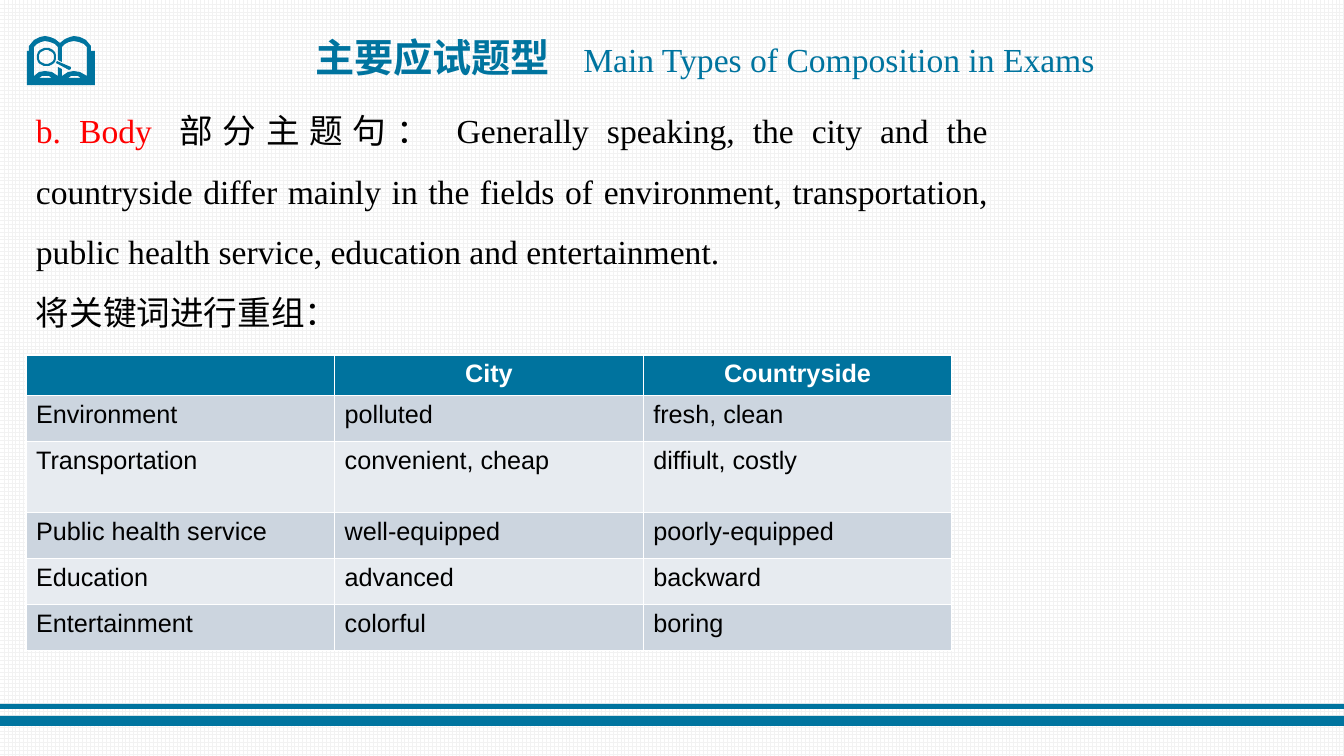
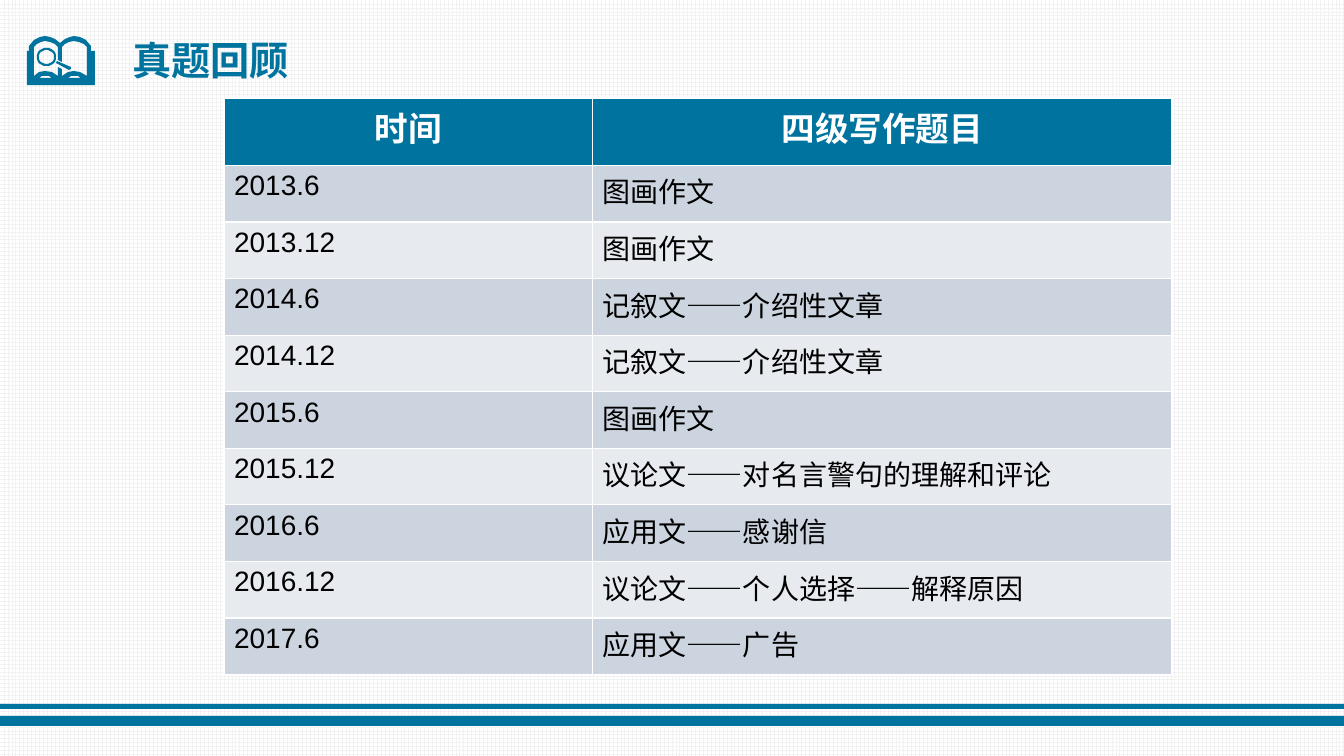
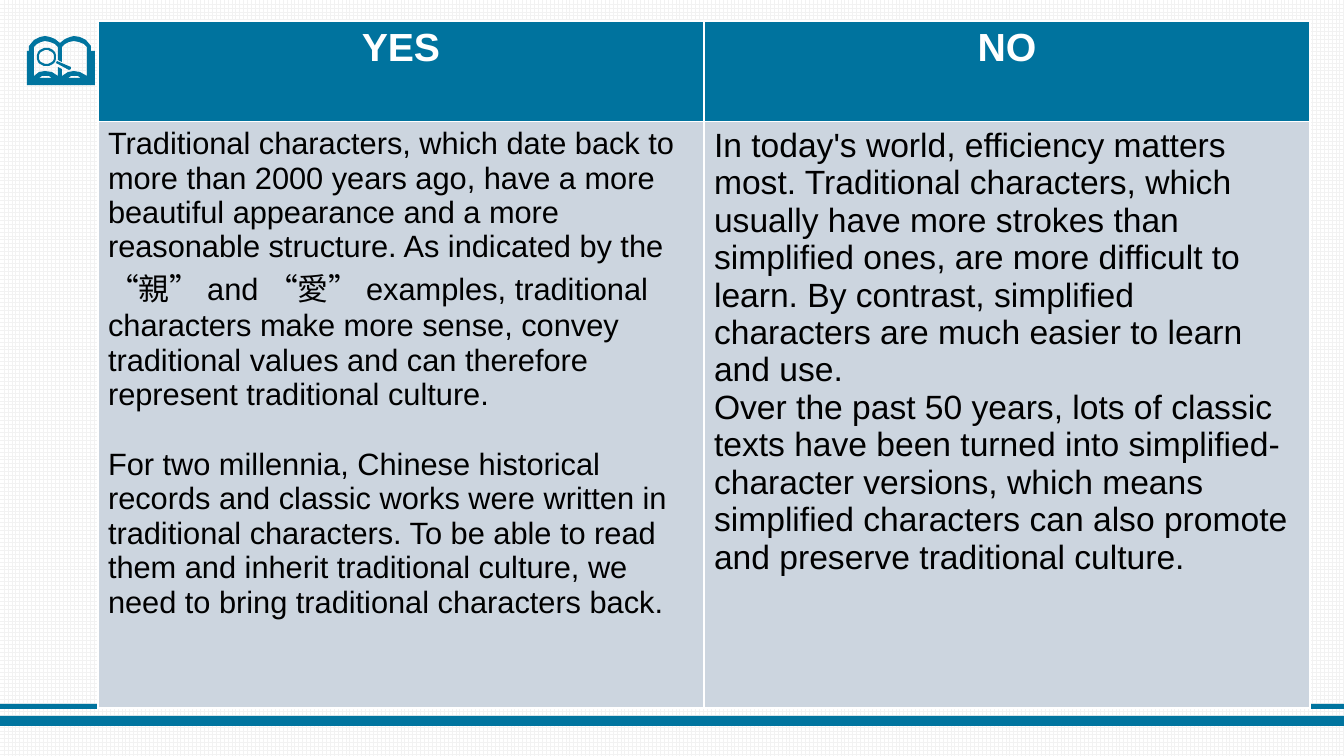
from dataclasses import dataclass
from math import cos, pi, sin
from typing import Any

from pptx import Presentation
from pptx.dml.color import RGBColor as Rgb
from pptx.enum.dml import MSO_PATTERN as Pattern
from pptx.enum.shapes import MSO_SHAPE as Kind
from pptx.enum.text import MSO_ANCHOR as Anchor, MSO_AUTO_SIZE as Fit, PP_ALIGN as Align
from pptx.util import Emu, Pt

WIDE, HIGH = 1344, 756
UNIT = 12192000 / WIDE

HEX = {
    "teal": "00749F", "head": "00739E", "odd": "CCD5DF", "even": "E7EBF0",
    "grid": "F2F2F2", "white": "FFFFFF", "black": "000000", "red": "FF0000",
}
SERIF, SANS = "Times New Roman", "Arial"
TITLE = {"name": SERIF, "size": Pt(28), "bold": True}
PLAIN = {"name": SERIF, "size": Pt(24), "bold": False}
BANDS = ((704, 5), (716, 10))

Point = tuple[float, float]
Box = tuple[int, int, int, int]


@dataclass
class Run:
    text: str
    hue: str
    font: dict[str, Any]


@dataclass
class Grid:
    """Columns and rows are shares of the box; each text line of a cell is a paragraph."""
    box: Box
    cols: tuple[int, ...]
    rows: tuple[int, ...]
    cells: list[tuple[str, ...]]
    head: int
    sizes: tuple[int, ...]
    gaps: tuple[int, ...]


def px(num: float) -> Emu:
    return Emu(round(num * UNIT))


def tint(hue: str) -> Rgb:
    return Rgb.from_string(HEX[hue])


def apply(item: Any, form: dict[str, Any]) -> None:
    for key, val in form.items():
        setattr(item, key, val)


def place(item: Any, box: Box) -> None:
    apply(item, dict(zip(("left", "top", "width", "height"), map(px, box))))


def write(para: Any, runs: list[Run], form: dict[str, Any]) -> None:
    apply(para, form)
    for run in runs:
        part = para.add_run()
        part.text = run.text
        apply(part.font, run.font)
        part.font.color.rgb = tint(run.hue)


def fill(shape: Any, hue: str) -> None:
    shape.shadow.inherit = False
    shape.fill.solid()
    shape.fill.fore_color.rgb = tint(hue)
    shape.line.fill.background()


# Shared look: background, bands and book icon
def ring(mid_x: float, mid_y: float, size: float) -> list[Point]:
    turns = [2 * pi * step / 24 for step in range(24)]
    return [(mid_x + size * cos(turn), mid_y + size * sin(turn)) for turn in turns]


def hump(mid: int) -> list[Point]:
    return [(mid - 6, 78), (mid - 3, 76), (mid + 4, 76), (mid + 7, 78)]


COVER = [
    (45, 36), (50, 37), (55, 39), (60, 43), (65, 39), (70, 37), (74, 36), (80, 37),
    (86, 40), (91, 46), (91, 51), (95, 51), (95, 85), (27, 85), (27, 51), (29, 51),
    (29, 46), (34, 40), (40, 37),
]
PAGES = [
    (45, 41), (50, 42), (55, 44), (58, 47), (58, 60), (62, 62), (62, 47), (65, 44),
    (69, 42), (74, 41), (79, 42), (84, 44), (87, 47), (87, 76), (80, 72), (74, 71),
    (68, 72), (62, 76), (62, 69), (58, 67), (58, 76), (52, 72), (45, 71), (39, 72),
    (34, 76), (34, 47), (37, 44), (41, 42),
]
STEM = [(57, 61), (71, 67), (71, 69), (69, 70), (56, 63)]
BOOK = [COVER, PAGES, ring(46.5, 57, 9.5), ring(46.5, 57, 7.5), STEM, hump(45), hump(74)]


def book(slide: Any) -> Any:
    pen = slide.shapes.build_freeform(*BOOK[0][0], scale=UNIT)
    for spot, line in enumerate(BOOK):
        if spot:
            pen.move_to(*line[0])
        pen.add_line_segments(line[1:], close=True)
    return pen.convert_to_shape()


def dress(master: Any, slide: Any) -> None:
    """Draw the shared parts on a slide, then move them to the master."""
    back = master.background.fill
    back.patterned()
    back.pattern = Pattern.LARGE_GRID
    back.fore_color.rgb, back.back_color.rgb = tint("grid"), tint("white")
    parts = [slide.shapes.add_shape(Kind.RECTANGLE, 0, px(top), px(WIDE), px(tall))
             for top, tall in BANDS]
    tree = master.shapes.element
    for part in [*parts, book(slide)]:
        fill(part, "teal")
        part.element.nvSpPr.cNvPr.set("id", str(len(tree)))
        tree.append(part.element)


# Text and tables
def frame(shape: Any, anchor: Any) -> Any:
    text = shape.text_frame
    apply(text, {"word_wrap": True, "auto_size": Fit.NONE, "vertical_anchor": anchor})
    return text


def title(slide: Any, text: str, box: Box, anchor: Any, form: dict[str, Any]) -> None:
    shape = slide.shapes.title
    place(shape, box)
    write(frame(shape, anchor).paragraphs[0], [Run(text, "teal", TITLE)], form)


def note(slide: Any, box: Box, paras: list[list[Run]], form: dict[str, Any]) -> None:
    text = frame(slide.shapes.add_textbox(*map(px, box)), Anchor.TOP)
    for spot, runs in enumerate(paras):
        write(text.add_paragraph() if spot else text.paragraphs[0], runs, form)


def split(total: int, parts: tuple[int, ...]) -> list[Emu]:
    return [px(total * part / sum(parts)) for part in parts]


def table(slide: Any, grid: Grid) -> None:
    size = len(grid.rows), len(grid.cols)
    made = slide.shapes.add_table(*size, *map(px, grid.box)).table
    for col, wide in zip(made.columns, split(grid.box[2], grid.cols)):
        col.width = wide
    for row, tall in zip(made.rows, split(grid.box[3], grid.rows)):
        row.height = tall
    for down, line in enumerate(grid.cells):
        top = down == 0
        for over, words in enumerate(line):
            cell = made.cell(down, over)
            cell.fill.solid()
            cell.fill.fore_color.rgb = tint("head" if top else "odd" if down % 2 else "even")
            font = {"name": SANS, "bold": top, "size": Pt(grid.head if top else grid.sizes[over])}
            lines = words.split("\n")
            for spot, words in enumerate(lines):
                para = cell.text_frame.add_paragraph() if spot else cell.text_frame.paragraphs[0]
                form = {"alignment": Align.CENTER if top else Align.LEFT}
                if spot:
                    form["space_before"] = Pt(grid.gaps[over])
                if words:
                    write(para, [Run(words, "white" if top else "black", font)], form)


# Slide content
FIELDS = Grid(
    (26, 355, 926, 295), (1, 1, 1), (40, 46, 71, 46, 46, 46),
    [
        ("", "City", "Countryside"),
        ("Environment", "polluted", "fresh, clean"),
        ("Transportation", "convenient, cheap", "diffiult, costly"),
        ("Public health service", "well-equipped", "poorly-equipped"),
        ("Education", "advanced", "backward"),
        ("Entertainment", "colorful", "boring"),
    ],
    18, (18, 18, 18), (0, 0, 0),
)
EXAMS = Grid(
    (224, 98, 948, 577), (366, 575), (119,) + (100,) * 9,
    [
        ("时间", "四级写作题目"),
        ("2013.6", "图画作文"),
        ("2013.12", "图画作文"),
        ("2014.6", "记叙文——介绍性文章"),
        ("2014.12", "记叙文——介绍性文章"),
        ("2015.6", "图画作文"),
        ("2015.12", "议论文——对名言警句的理解和评论"),
        ("2016.6", "应用文——感谢信"),
        ("2016.12", "议论文——个人选择——解释原因"),
        ("2017.6", "应用文——广告"),
    ],
    24, (20, 20), (0, 0),
)
SIDES = Grid(
    (98, 21, 1212, 687), (1, 1), (100, 582),
    [
        ("YES", "NO"),
        (
            "Traditional characters, which date back to more than 2000 years ago, have a more "
            "beautiful appearance and a more reasonable structure. As indicated by the “親” and "
            "“愛” examples, traditional characters make more sense, convey traditional values "
            "and can therefore represent traditional culture.\n"
            "For two millennia, Chinese historical records and classic works were written in "
            "traditional characters. To be able to read them and inherit traditional culture, "
            "we need to bring traditional characters back.",
            "In today's world, efficiency matters most. Traditional characters, which usually "
            "have more strokes than simplified ones, are more difficult to learn. By contrast, "
            "simplified characters are much easier to learn and use.\n"
            "Over the past 50 years, lots of classic texts have been turned into "
            "simplified-character versions, which means simplified characters can also promote "
            "and preserve traditional culture.",
        ),
    ],
    28, (22, 24), (25, 0),
)
TOPIC = [
    [
        Run("b. Body ", "red", PLAIN),
        Run("部分主题句： Generally speaking, the city and the countryside differ mainly in "
            "the fields of environment, transportation, public health service, education and "
            "entertainment.", "black", PLAIN),
    ],
    [Run("将关键词进行重组：", "black", PLAIN)],
]


def main() -> None:
    deck = Presentation()
    deck.slide_width, deck.slide_height = px(WIDE), px(HIGH)
    types, sides, exams = (deck.slides.add_slide(deck.slide_layouts[num]) for num in (5, 6, 5))
    order = deck.slides.element if hasattr(deck.slides, "element") else None
    if order is not None:
        order.append(order[1])
    dress(deck.slide_master, types)

    # Main types of composition
    title(types, "主要应试题型", (131, 28, 603, 57), Anchor.TOP, {"alignment": Align.CENTER})
    note(types, (523, 34, 632, 50), [[Run("Main Types of Composition in Exams", "teal", PLAIN)]],
         {"alignment": Align.CENTER})
    note(types, (26, 85, 972, 260), TOPIC, {"alignment": Align.JUSTIFY, "line_spacing": 1.5})
    table(types, FIELDS)

    # Past exam topics
    title(exams, "真题回顾", (122, 24, 710, 72), Anchor.MIDDLE,
          {"alignment": Align.LEFT, "space_before": Pt(10)})
    table(exams, EXAMS)

    # Arguments for and against
    table(sides, SIDES)
    deck.save("out.pptx")


if __name__ == "__main__":
    main()
